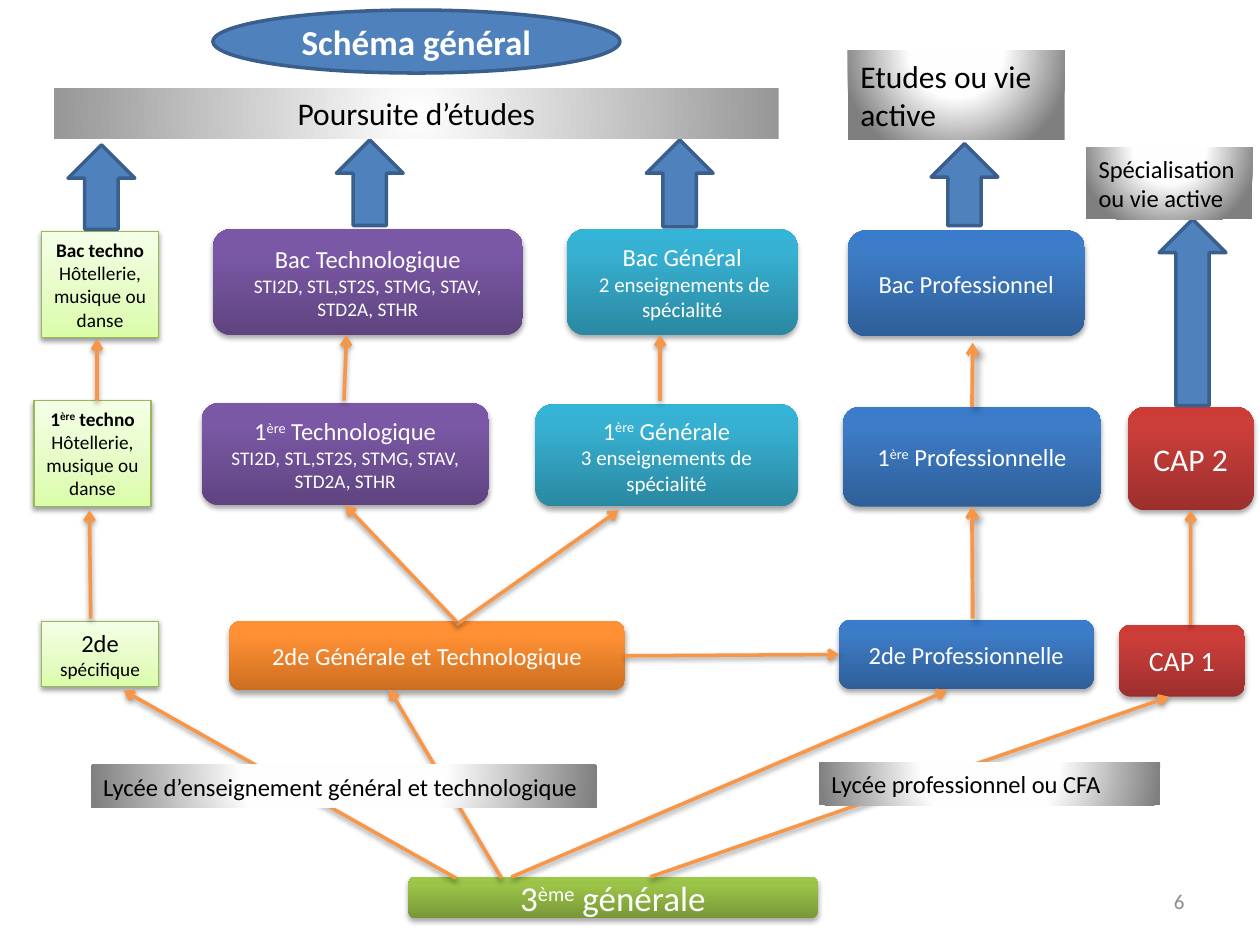
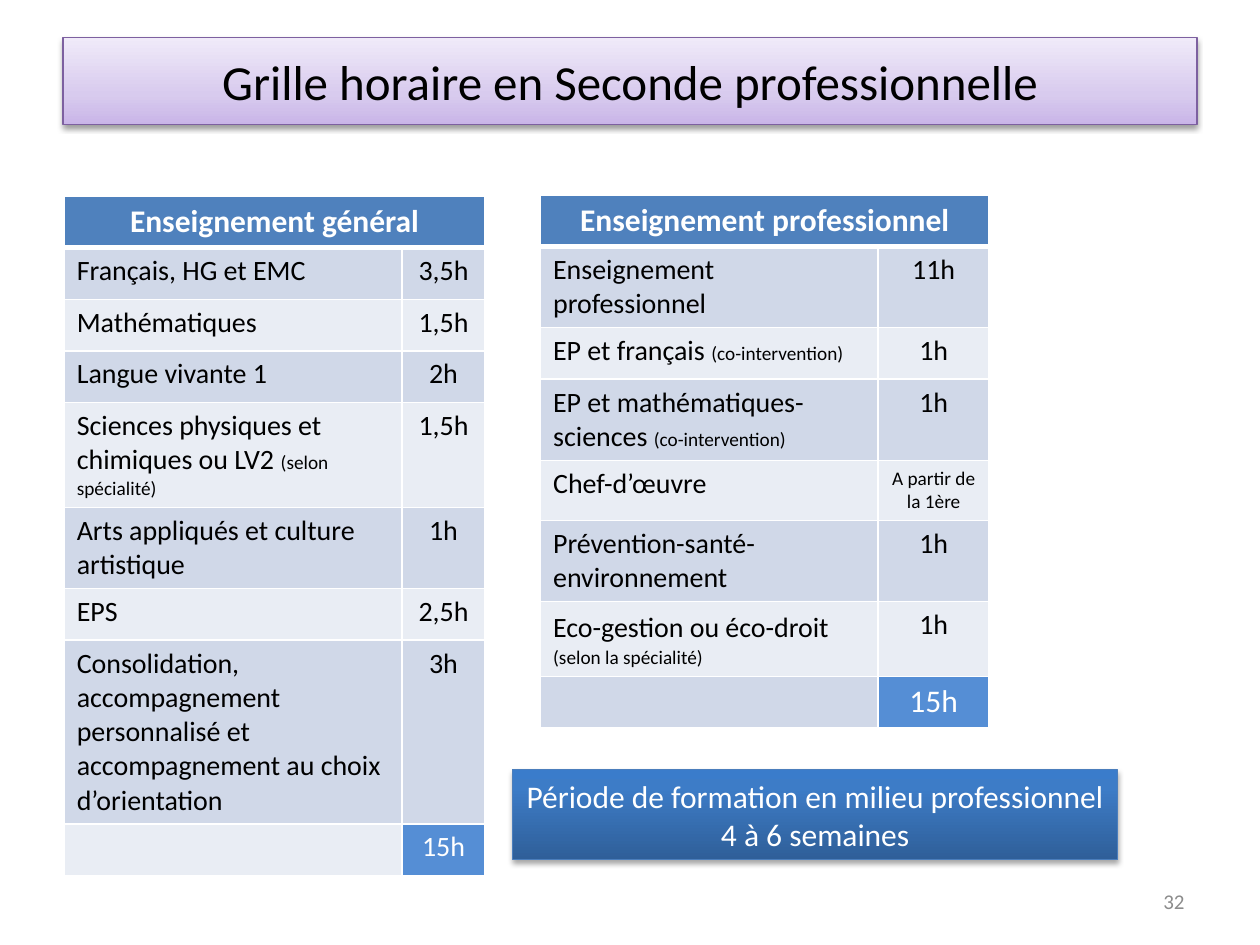
from pptx import Presentation
from pptx.dml.color import RGBColor
from pptx.enum.shapes import MSO_CONNECTOR, MSO_SHAPE
from pptx.enum.text import MSO_ANCHOR, PP_ALIGN
from pptx.oxml import parse_xml
from pptx.oxml.ns import nsdecls
from pptx.util import Inches, Pt

# Colours
WHITE = RGBColor(0xFF, 0xFF, 0xFF)
BLACK = RGBColor(0x00, 0x00, 0x00)
GREY = RGBColor(0x8C, 0x8C, 0x8C)
BLUE = RGBColor(0x4F, 0x81, 0xBD)
NAVY = RGBColor(0x3A, 0x5F, 0x8C)
STEEL = RGBColor(0x4B, 0x7E, 0xBC)
AMBER = RGBColor(0xF7, 0x96, 0x46)
LEAF = RGBColor(0x98, 0xB9, 0x55)
PLUM = RGBColor(0x7D, 0x60, 0xA0)
TOTAL = RGBColor(0x55, 0x8E, 0xD5)
BANDS = (RGBColor(0xD0, 0xD8, 0xE8), RGBColor(0xE9, 0xED, 0xF4))


def blend(places, *codes):
    return [(place, RGBColor.from_string(code)) for place, code in zip(places, codes)]


# Gradients, from bottom to top or from centre to edge
GLOSS = (0, 80, 100)
PALE = (0, 35, 100)
ORANGE_MIX = blend(GLOSS, "CC6E20", "FF9034", "FF9136")
BLUE_MIX = blend(GLOSS, "2F5F99", "3D7CC7", "3A7CCB")
RED_MIX = blend(GLOSS, "9C2F2D", "CB3E3A", "CE3B37")
TEAL_MIX = blend(GLOSS, "2A88A2", "37B1D2", "34B4D6")
PLUM_MIX = blend(GLOSS, "5F4480", "7B58A6", "7C57A8")
GREEN_MIX = blend(GLOSS, "779737", "9BC348", "9DC746")
LIME_MIX = blend(PALE, "DAFDA7", "E4FCC2", "F5FFE7")
LILAC_MIX = blend(PALE, "C9B5E8", "D8CBEE", "F0EAF9")
SILVER_MIX = blend((0, 40, 100), "FFFFFF", "FEFEFE", "7F7F7F")
STRIP_MIX = blend((0, 100), "FFFFFF", "979797")

# Ways for a gradient to run
LINEAR = '<a:lin ang="16200000" scaled="0"/>'
ROUND = ('<a:path path="circle"><a:fillToRect l="50000" t="{}" '
         'r="50000" b="{}"/></a:path>')
ABOVE = ROUND.format(-80000, 180000)
CENTRE = ROUND.format(50000, 50000)

# Shadows: opacity, blur, distance, angle
SOFT = (35, 3.1, 1.8, 90)
CRISP = (38, 3.1, 1.6, 90)
SLANT = (40, 4, 3, 45)


def write(frame, *lines, size=14, color=WHITE, bold=False, align=PP_ALIGN.CENTER):
    """A line is a run or a list of runs; a run is text or (text, size, bold).
    Carets enclose superscripts."""
    frame.word_wrap = True
    for index, line in enumerate(lines):
        para = frame.add_paragraph() if index else frame.paragraphs[0]
        para.alignment = align
        for part in line if isinstance(line, list) else [line]:
            text, *form = part if isinstance(part, tuple) else (part,)
            points, heavy = (form + [size, bold][len(form):])[:2]
            for turn, piece in enumerate(text.split("^")):
                if not piece:
                    continue
                run = para.add_run()
                run.text = piece
                font = run.font
                font.name, font.size, font.bold = "Calibri", Pt(points), heavy
                font.color.rgb = color
                if turn % 2:
                    run._r.get_or_add_rPr().set("baseline", "30000")


def shade(shape, stops, course=LINEAR):
    marks = "".join(f'<a:gs pos="{place * 1000}"><a:srgbClr val="{color}"/></a:gs>'
                    for place, color in stops)
    fill = parse_xml(f'<a:gradFill {nsdecls("a")} rotWithShape="1">'
                     f'<a:gsLst>{marks}</a:gsLst>{course}</a:gradFill>')
    shape._element.spPr.insert(2, fill)


def cast(shape, shadow=None):
    body = ""
    if shadow:
        alpha, blur, gap, angle = shadow
        body = (f'<a:outerShdw blurRad="{Pt(blur)}" dist="{Pt(gap)}" '
                f'dir="{angle * 60000}" rotWithShape="0"><a:srgbClr val="000000">'
                f'<a:alpha val="{alpha * 1000}"/></a:srgbClr></a:outerShdw>')
    shape._element.spPr.append(
        parse_xml(f'<a:effectLst {nsdecls("a")}>{body}</a:effectLst>'))


def draw(slide, kind, spot, fill, *lines, edge=None, width=0.75, course=LINEAR,
         shadow=None, **form):
    shape = slide.shapes.add_shape(kind, *map(Inches, spot))
    if edge is None:
        shape.line.fill.background()
    else:
        shape.line.color.rgb = edge
        shape.line.width = Pt(width)
    if isinstance(fill, RGBColor):
        shape.fill.solid()
        shape.fill.fore_color.rgb = fill
    else:
        shade(shape, fill, course)
    cast(shape, shadow)
    write(shape.text_frame, *lines, **form)
    return shape


def stage(slide, spot, mix, *lines, **form):
    return draw(slide, MSO_SHAPE.ROUNDED_RECTANGLE, spot, mix, *lines,
                shadow=SOFT, **form)


def card(slide, spot, *lines, **form):
    return draw(slide, MSO_SHAPE.RECTANGLE, spot, LIME_MIX, *lines, edge=LEAF,
                shadow=CRISP, color=BLACK, size=11, **form)


def label(slide, spot, text, mix=SILVER_MIX, course=ABOVE, size=14,
          align=PP_ALIGN.LEFT):
    return draw(slide, MSO_SHAPE.RECTANGLE, spot, mix, text, course=course,
                color=BLACK, size=size, align=align)


def link(slide, start, end, shadow=CRISP, width=2, leave=None, reach=None):
    line = slide.shapes.add_connector(MSO_CONNECTOR.STRAIGHT,
                                      *map(Inches, start + end))
    if leave:
        line.begin_connect(*leave)
    if reach:
        line.end_connect(*reach)
    line.line.color.rgb = AMBER
    line.line.width = Pt(width)
    line.line._get_or_add_ln().append(
        parse_xml(f'<a:tailEnd {nsdecls("a")} type="arrow"/>'))
    cast(line, shadow)


def number(slide, text):
    box = slide.shapes.add_textbox(*map(Inches, (7.17, 6.95, 2.33, 0.4)))
    box.text_frame.vertical_anchor = MSO_ANCHOR.MIDDLE
    write(box.text_frame, text, size=12, color=GREY, align=PP_ALIGN.RIGHT)


def border(cell, top, base):
    props = cell._tc.get_or_add_tcPr()
    for index, (side, width) in enumerate(zip("LRTB", (1, 1, top, base))):
        props.insert(index, parse_xml(
            f'<a:ln{side} {nsdecls("a")} w="{Pt(width)}"><a:solidFill>'
            f'<a:srgbClr val="{WHITE}"/></a:solidFill></a:ln{side}>'))


def grid(slide, left, top, widths, head, rows, total, size):
    """Timetable: a merged heading, banded rows and a total."""
    count = len(rows) + 2
    table = slide.shapes.add_table(count, 2, Inches(left), Inches(top),
                                   Inches(sum(widths)),
                                   Inches(0.39 + 0.41 * (count - 1))).table
    for column, width in zip(table.columns, widths):
        column.width = Inches(width)
    for index, row in enumerate(table.rows):
        row.height = Inches(0.41 if index else 0.39)
        for cell in row.cells:
            cell.fill.solid()
            cell.fill.fore_color.rgb = BANDS[(index - 1) % 2] if index else BLUE
            border(cell, 3 if index == 1 else 1, 1 if index else 3)
    table.cell(0, 0).merge(table.cell(0, 1))
    write(table.cell(0, 0).text_frame, head, size=18, bold=True)
    for index, (topic, hours) in enumerate(rows, 1):
        write(table.cell(index, 0).text_frame, topic, size=16, color=BLACK,
              align=PP_ALIGN.LEFT)
        write(table.cell(index, 1).text_frame, hours, size=16, color=BLACK)
    last = table.cell(count - 1, 1)
    last.fill.fore_color.rgb = TOTAL
    write(last.text_frame, total, size=size)


def paths(slide):
    # Stages, from the bottom row to the top
    tracks = ("STI2D, STL,ST2S, STMG, STAV, STD2A, STHR", 11)
    arts = ("Hôtellerie, musique ou danse", 11, False)
    stage(slide, (3.24, 6.96, 3.25, 0.33), GREEN_MIX, "3^ème^ générale", size=20)
    common = stage(slide, (1.82, 4.93, 3.14, 0.55), ORANGE_MIX,
                   "2de Générale et Technologique")
    trade = stage(slide, (6.66, 4.92, 2.02, 0.55), BLUE_MIX, "2de Professionnelle")
    stage(slide, (8.88, 4.96, 1, 0.57), RED_MIX, "CAP 1", size=16)
    tech = stage(slide, (1.6, 3.2, 2.28, 0.81), PLUM_MIX,
                 "1^ère^ Technologique", tracks)
    stage(slide, (4.25, 3.21, 2.08, 0.81), TEAL_MIX, "1^ère^ Générale",
          ("3 enseignements de spécialité", 12))
    craft = stage(slide, (6.69, 3.23, 2.05, 0.79), BLUE_MIX, "1^ère^ Professionnelle")
    skill = stage(slide, (8.95, 3.23, 1, 0.82), RED_MIX, "CAP 2", size=18)
    stage(slide, (1.69, 1.82, 2.46, 0.84), PLUM_MIX, "Bac Technologique", tracks)
    stage(slide, (4.5, 1.82, 1.83, 0.84), TEAL_MIX, "Bac Général",
          (" 2 enseignements de spécialité", 12))
    stage(slide, (6.73, 1.83, 1.88, 0.84), BLUE_MIX, "Bac Professionnel")
    card(slide, (0.33, 4.93, 0.93, 0.52), ("2de", 14), "spécifique")
    card(slide, (0.27, 3.18, 0.93, 0.84), ("1^ère^ techno", 11, True), arts)
    card(slide, (0.33, 1.84, 0.93, 0.84), ("Bac techno", 11, True), arts)

    # Routes between stages
    for start, end in (
            ((3.62, 6.97), (0.98, 5.48)), ((3.98, 6.97), (3.09, 5.47)),
            ((4.06, 6.96), (7.52, 5.48)), ((5.16, 6.96), (9.28, 5.53)),
            ((0.72, 4.91), (0.71, 4.05)), ((3.62, 4.96), (4.91, 4.05)),
            ((0.77, 3.18), (0.77, 2.69)), ((2.73, 3.18), (2.75, 2.66)),
            ((5.24, 3.18), (5.24, 2.66))):
        link(slide, start, end)
    link(slide, (4.96, 5.2), (6.66, 5.2), leave=(common, 3), reach=(trade, 1))
    link(slide, (3.62, 4.93), (2.74, 4.01), reach=(tech, 2))
    link(slide, (9.45, 4.96), (9.45, 4.05), reach=(skill, 2))
    link(slide, (7.72, 4.91), (7.72, 4.02), SLANT, 2.25, reach=(craft, 2))
    link(slide, (7.72, 3.23), (7.72, 2.72), SLANT, 2.25, leave=(craft, 0))

    # Ways out
    for left, top, height in ((0.54, 1.15, 0.67), (2.67, 1.11, 0.68),
                              (5.13, 1.11, 0.69), (7.39, 1.14, 0.65),
                              (9.2, 1.74, 1.48)):
        draw(slide, MSO_SHAPE.UP_ARROW, (left, top, 0.53, height), BLUE,
             edge=NAVY, width=2)

    # Labels
    label(slide, (0.43, 0.7, 5.75, 0.4), "Poursuite d’études", STRIP_MIX, CENTRE,
          18, PP_ALIGN.CENTER)
    label(slide, (6.73, 0.4, 1.72, 0.71), "Etudes ou vie active", size=18)
    label(slide, (8.62, 1.17, 1.32, 0.57), "Spécialisation ou vie active")
    label(slide, (0.72, 6.07, 4.02, 0.34),
          "Lycée d’enseignement général et technologique")
    label(slide, (6.5, 6.05, 2.71, 0.34), "Lycée professionnel ou CFA")
    draw(slide, MSO_SHAPE.OVAL, (1.69, 0.08, 3.23, 0.5), BLUE, "Schéma général",
         edge=NAVY, width=2, size=20, bold=True)
    number(slide, "6")


def hours(slide):
    # Title
    draw(slide, MSO_SHAPE.RECTANGLE, (0.5, 0.3, 9, 0.69), LILAC_MIX,
         "Grille horaire en Seconde professionnelle", edge=PLUM, shadow=CRISP,
         size=28, color=BLACK)

    # Timetables
    shared = ("(co-intervention)", 11)
    grid(slide, 0.51, 1.56, (2.68, 0.66), "Enseignement général", [
        ("Français, HG et EMC", "3,5h"),
        ("Mathématiques", "1,5h"),
        ("Langue vivante 1", "2h"),
        (["Sciences physiques et chimiques ou LV2 ", ("(selon spécialité)", 11)],
         "1,5h"),
        ("Arts appliqués et culture artistique", "1h"),
        ("EPS", "2,5h"),
        ("Consolidation, accompagnement personnalisé et accompagnement "
         "au choix d’orientation", "3h"),
    ], "15h", 16)
    grid(slide, 4.29, 1.55, (2.68, 0.88), "Enseignement professionnel", [
        ("Enseignement professionnel", "11h"),
        (["EP et français ", shared], "1h"),
        (["EP et mathématiques-sciences ", shared], "1h"),
        ("Chef-d’œuvre", ("A partir de la 1ère", 11)),
        ("Prévention-santé-environnement", "1h"),
        (["Eco-gestion ou éco-droit", (" ", 18), ("(selon la spécialité)", 11)],
         "1h"),
    ], "15h", 18)

    # Work placement
    draw(slide, MSO_SHAPE.RECTANGLE, (4.07, 6.11, 4.8, 0.71), BLUE_MIX,
         "Période de formation en milieu professionnel", "4 à 6 semaines",
         edge=STEEL, shadow=SOFT, size=18)
    number(slide, "32")


def main():
    deck = Presentation()
    deck.slide_width, deck.slide_height = Inches(10), Inches(7.5)
    for build in (paths, hours):
        build(deck.slides.add_slide(deck.slide_layouts[6]))
    deck.save("out.pptx")


if __name__ == "__main__":
    main()
